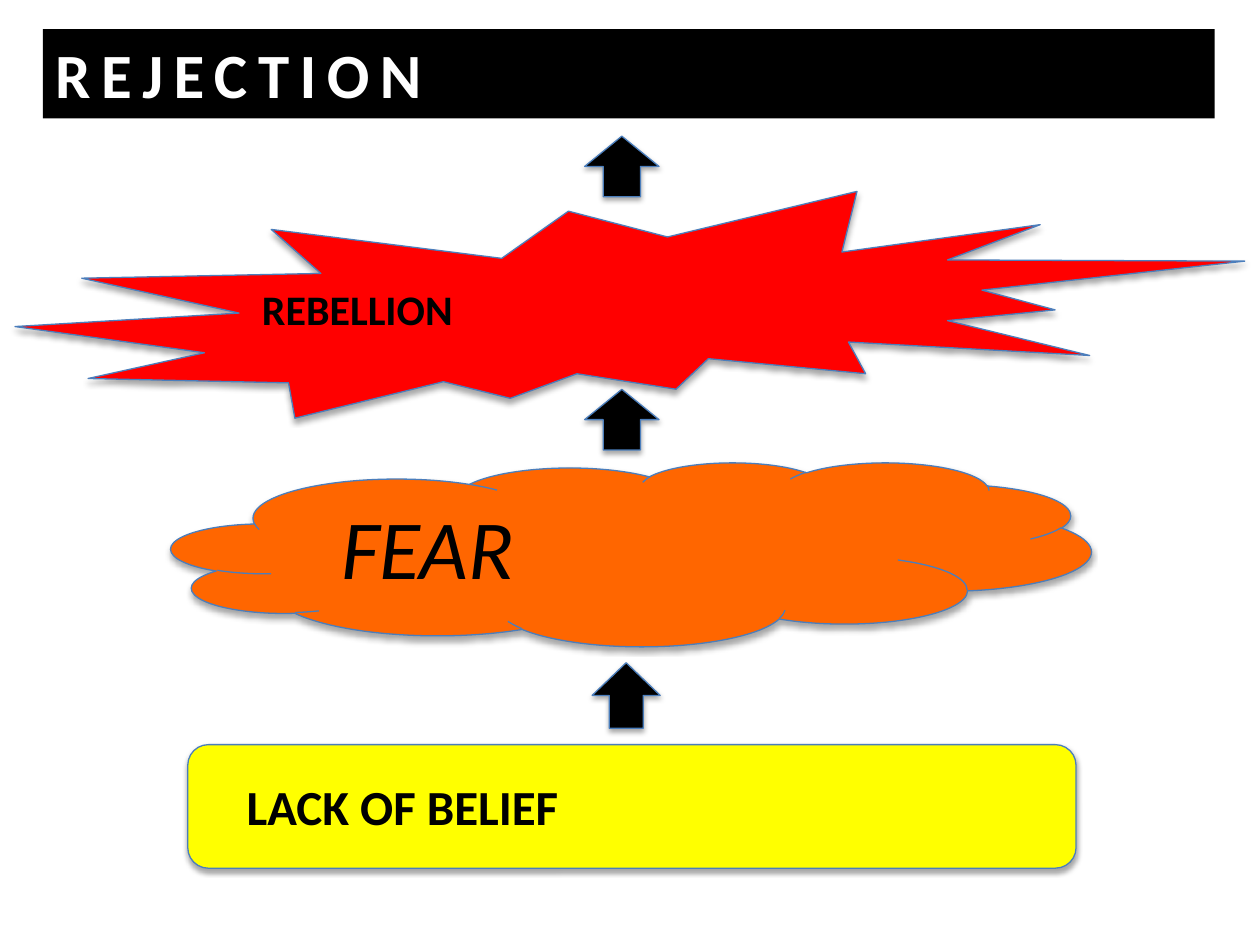
from lxml.etree import SubElement
from pptx import Presentation
from pptx.dml.color import RGBColor
from pptx.enum.shapes import MSO_SHAPE
from pptx.enum.text import MSO_ANCHOR, PP_ALIGN
from pptx.oxml.ns import qn
from pptx.util import Pt

BLACK = RGBColor(0, 0, 0)
WHITE = RGBColor(255, 255, 255)
ORANGE = RGBColor(0xFF, 0x66, 0)
YELLOW = RGBColor(255, 255, 0)
RED = RGBColor(255, 0, 0)
BLUE = RGBColor(0x4B, 0x7E, 0xBC)

# Stages and arrows, back to front: preset, fill, (left, top, width, height)
STAGES = [
    (MSO_SHAPE.CLOUD, ORANGE, (97.9, 264.2, 525.6, 105.1)),
    (MSO_SHAPE.FLOWCHART_ALTERNATE_PROCESS, YELLOW, (107.3, 425.5, 507.6, 70.6)),
    (MSO_SHAPE.UP_ARROW, BLACK, (334.1, 77.8, 42.5, 34.6)),
    (MSO_SHAPE.UP_ARROW, BLACK, (338.4, 378.7, 38.9, 37.4)),
    (MSO_SHAPE.UP_ARROW, BLACK, (334.1, 222.5, 42.5, 34.6)),
    (MSO_SHAPE.EXPLOSION2, RED, (8.6, 109.4, 702.7, 129.6)),
]

# Labels: text, size, bold, italic, box
TITLE = ("REJECTION", 36, True, False, (24.5, 16.6, 669.6, 51.1))
LABELS = [
    ("REBELLION", 24, True, False, (142.6, 158.4, 403.9, 36)),
    ("FEAR", 48, False, True, (187.9, 279.4, 326.2, 65.5)),
    ("LACK OF BELIEF", 28, True, False, (133.9, 439.9, 442.8, 41)),
]


def add_shadow(shape):
    shape.shadow.inherit = False
    effects = shape._element.spPr.find(qn("a:effectLst"))
    outer = SubElement(effects, qn("a:outerShdw"), blurRad=str(Pt(3.1)),
                       dist=str(Pt(1.8)), dir="5400000", rotWithShape="0")
    tint = SubElement(outer, qn("a:srgbClr"), val=str(BLACK))
    SubElement(tint, qn("a:alpha"), val="35000")


def add_stage(shapes, kind, fill, box):
    shape = shapes.add_shape(kind, *map(Pt, box))
    shape.fill.solid()
    shape.fill.fore_color.rgb = fill
    shape.line.color.rgb = BLUE
    shape.line.width = Pt(0.75)
    add_shadow(shape)


def add_label(shapes, text, size, bold, italic, box, color=BLACK):
    label = shapes.add_textbox(*map(Pt, box))
    frame = label.text_frame
    frame.word_wrap = True
    frame.vertical_anchor = MSO_ANCHOR.TOP
    para = frame.paragraphs[0]
    para.text = text
    para.alignment = PP_ALIGN.JUSTIFY
    font = para.font
    font.name, font.size = "Calibri", Pt(size)
    font.bold, font.italic = bold, italic
    font.color.rgb = color
    return label


deck = Presentation()
deck.slide_width, deck.slide_height = Pt(720), Pt(540)
shapes = deck.slides.add_slide(deck.slide_layouts[6]).shapes

for stage in STAGES:
    add_stage(shapes, *stage)

# Title bar with widely spaced letters
title = add_label(shapes, *TITLE, color=WHITE)
title.fill.solid()
title.fill.fore_color.rgb = BLACK
run = title.text_frame.paragraphs[0].runs[0]
run.font._element.set("spc", "600")

for label in LABELS:
    add_label(shapes, *label)

deck.save("out.pptx")
